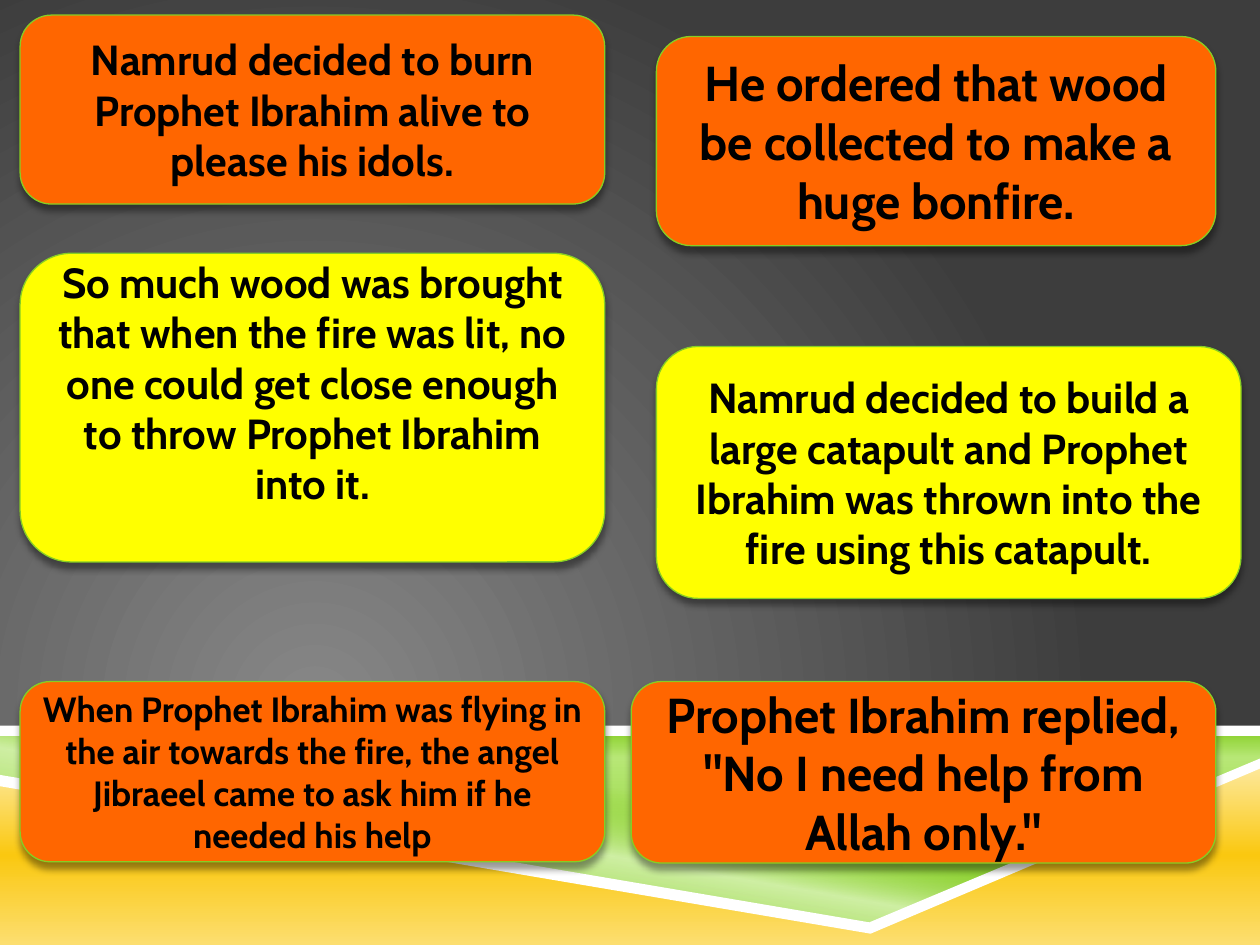
import pptx
import pptx.dml.color
import pptx.enum.shapes
import pptx.enum.text
import pptx.oxml
import pptx.oxml.ns
import pptx.util
from pptx.util import Inches

THEME = {
    "font": "Cabin", "text": "000000", "outline": "86CE24", "white": "FFFFFF",
    "orange": "FF6600", "yellow": "FFFF00",
    "small": 20, "medium": 24, "large": 28,
    "backdrop": [(0, "878787", 100), (100, "3D3D3D", 100)],
    "green": [(0, "86CE24", 100), (14, "B7E776", 100), (83, "86CE24", 100)],
    "sheen": [(41, "86CE24", 0), (57, "CFEFA4", 100), (100, "86CE24", 0)],
    "gold": [(0, "FDE99F", 100), (50, "FAC810", 100), (100, "FCDE70", 100)],
}

LEFT, RIGHT, WIDE = 0.16, 5.21, 4.64
STORY = [
    ("Namrud decided to burn Prophet Ibrahim alive to please his idols.",
     (LEFT, 0.12, WIDE, 1.5), "orange", "medium", 0.05),
    ("He ordered that wood be collected to make a huge bonfire.",
     (RIGHT, 0.29, 4.44, 1.66), "orange", "large", 0.05),
    ("So much wood was brought that when the fire was lit, no one could get "
     "close enough to throw Prophet Ibrahim into it.",
     (LEFT, 2.01, WIDE, 2.45), "yellow", "medium", 0.45),
    ("Namrud decided to build a large catapult and Prophet Ibrahim was thrown "
     "into the fire using this catapult.",
     (RIGHT, 2.75, WIDE, 2), "yellow", "medium", 0.05),
    ('Prophet Ibrahim replied, "No I need help from Allah only."',
     (5.01, 5.41, WIDE, 1.44), "orange", "large", 0.05),
    ("When Prophet Ibrahim was flying in the air towards the fire, the angel "
     "Jibraeel came to ask him if he needed his help",
     (LEFT, 5.41, WIDE, 1.43), "orange", "small", 0.05),
]

VALLEY = [(0, 5.8), (10, 5.79), (10, 6.07), (6.89, 7.37), (0, 6.19)]
GROUND = [(0, 6.21), (6.92, 7.38), (10, 6.07), (10, 7.5), (0, 7.5)]
RIBBON = [(0, 6.15), (6.9, 7.32), (10, 6.02), (10, 6.1), (6.91, 7.41), (0, 6.24)]
LINEAR = '<a:lin ang="{}" scaled="0"/>'
RADIAL = '<a:path path="circle"><a:fillToRect l="50000" t="100000" r="100000" b="50000"/></a:path>'


def rgb(name):
    return pptx.dml.color.RGBColor.from_string(THEME[name])


def fill_solid(fill, name):
    fill.solid()
    fill.fore_color.rgb = rgb(name)


def fill_gradient(fill, owner, name, direction):
    fill.gradient()
    old = owner.xpath(".//a:gradFill")[0]
    stops = "".join(
        f'<a:gs pos="{place * 1000}"><a:srgbClr val="{color}">'
        f'<a:alpha val="{alpha * 1000}"/></a:srgbClr></a:gs>'
        for place, color, alpha in THEME[name])
    old.getparent().replace(old, pptx.oxml.parse_xml(
        f'<a:gradFill {pptx.oxml.ns.nsdecls("a")} rotWithShape="1">'
        f"<a:gsLst>{stops}</a:gsLst>{direction}</a:gradFill>"))


def add_outline(slide, points):
    corners = [(Inches(x), Inches(y)) for x, y in points]
    builder = slide.shapes.build_freeform(*corners[0])
    builder.add_line_segments(corners[1:], close=True)
    outline = builder.convert_to_shape()
    outline.line.fill.background()
    outline.shadow.inherit = False
    return outline


def add_landscape(slide):
    fill_gradient(slide.background.fill, slide.element, "backdrop", RADIAL)
    for points, name, angle in [(VALLEY, "green", 90), (VALLEY, "sheen", 100), (GROUND, "gold", 90)]:
        field = add_outline(slide, points)
        fill_gradient(field.fill, field.element, name, LINEAR.format(angle * 60000))
    horizon = slide.shapes.add_shape(
        pptx.enum.shapes.MSO_SHAPE.RECTANGLE, *map(Inches, (0, 5.76, 10, 0.08)))
    horizon.line.fill.background()
    horizon.shadow.inherit = False
    for strip in (horizon, add_outline(slide, RIBBON)):
        fill_solid(strip.fill, "white")


def add_card(slide, sentence, place, color, size, bottom):
    card = slide.shapes.add_shape(
        pptx.enum.shapes.MSO_SHAPE.ROUNDED_RECTANGLE, *map(Inches, place))
    fill_solid(card.fill, color)
    card.line.color.rgb = rgb("outline")
    card.line.width = pptx.util.Pt(0.75)
    card.shadow.inherit = False
    card.element.xpath("./p:spPr/a:effectLst")[0].append(pptx.oxml.parse_xml(
        f'<a:outerShdw {pptx.oxml.ns.nsdecls("a")} blurRad="50800" dist="42000" dir="5400000" '
        'rotWithShape="0"><a:srgbClr val="000000"><a:alpha val="40000"/></a:srgbClr></a:outerShdw>'))
    frame = card.text_frame
    frame.word_wrap = True
    frame.vertical_anchor = pptx.enum.text.MSO_ANCHOR.MIDDLE
    frame.margin_bottom = Inches(bottom)
    frame.text = sentence
    line = frame.paragraphs[0]
    line.alignment = pptx.enum.text.PP_ALIGN.CENTER
    line.font.name = THEME["font"]
    line.font.size = pptx.util.Pt(THEME[size])
    line.font.bold = True
    line.font.color.rgb = rgb("text")


def main():
    """Build the story slide of Prophet Ibrahim and the fire."""
    deck = pptx.Presentation()
    deck.slide_width, deck.slide_height = Inches(10), Inches(7.5)
    slide = deck.slides.add_slide(deck.slide_layouts[6])
    add_landscape(slide)
    for card in STORY:
        add_card(slide, *card)
    deck.save("out.pptx")


if __name__ == "__main__":
    main()
